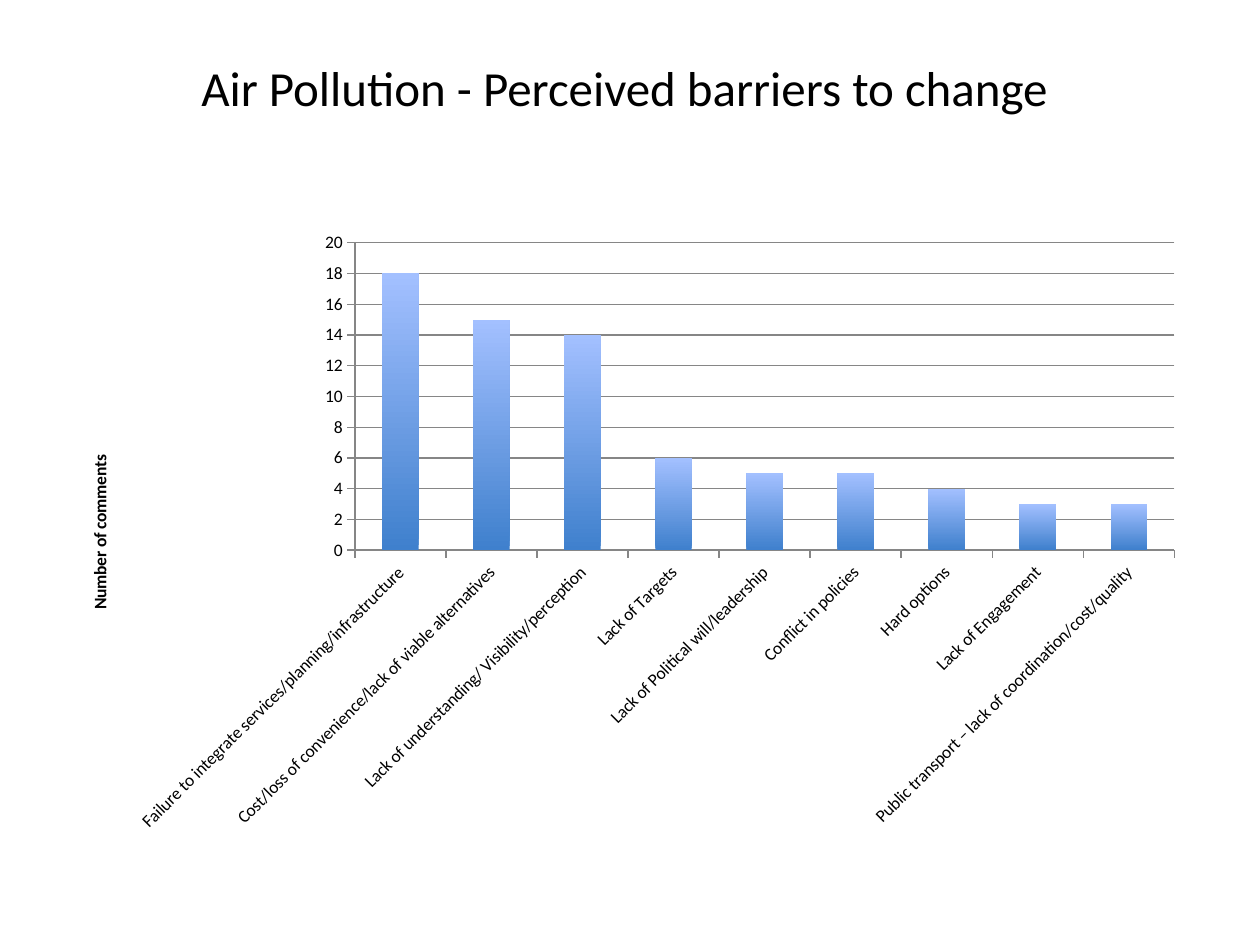
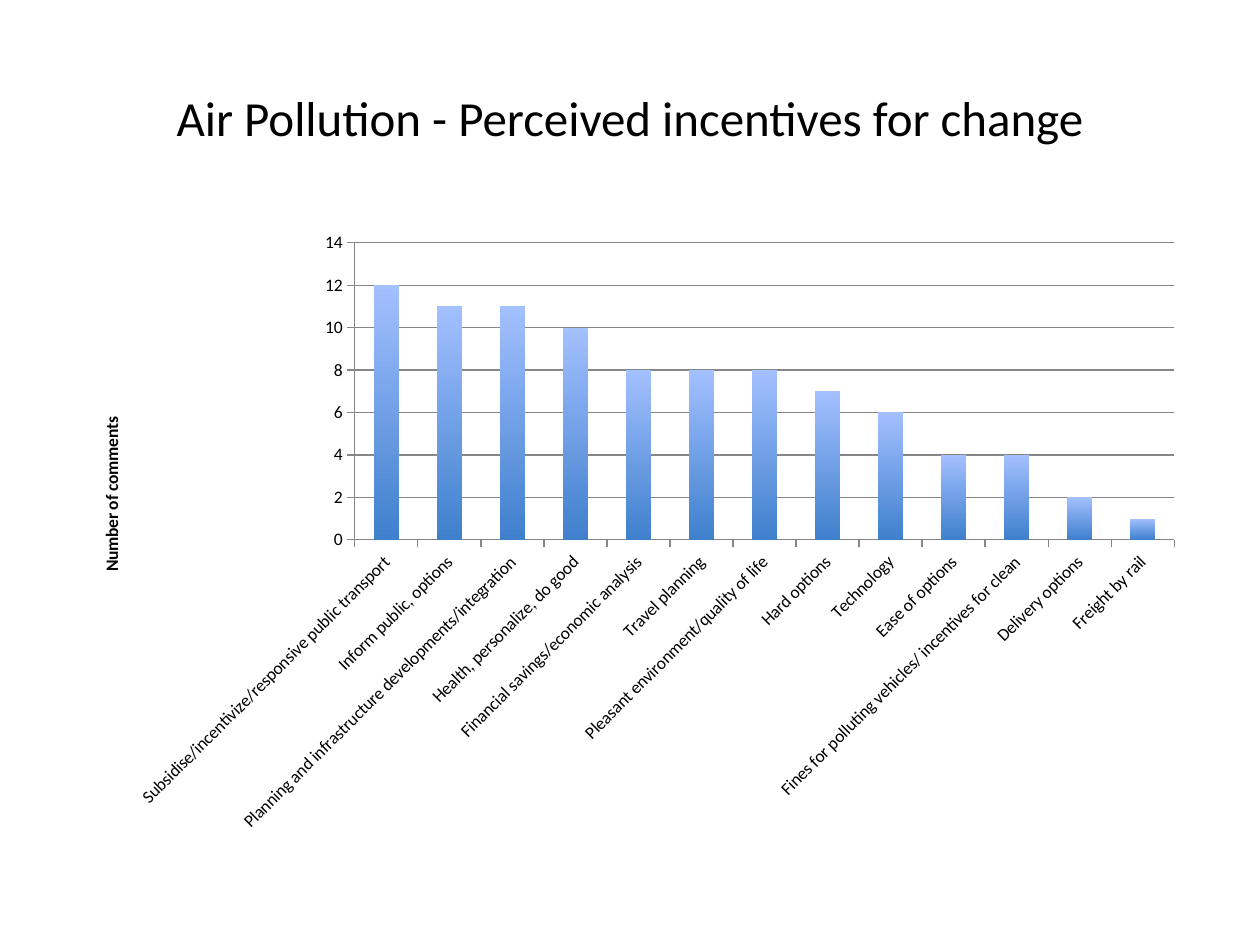
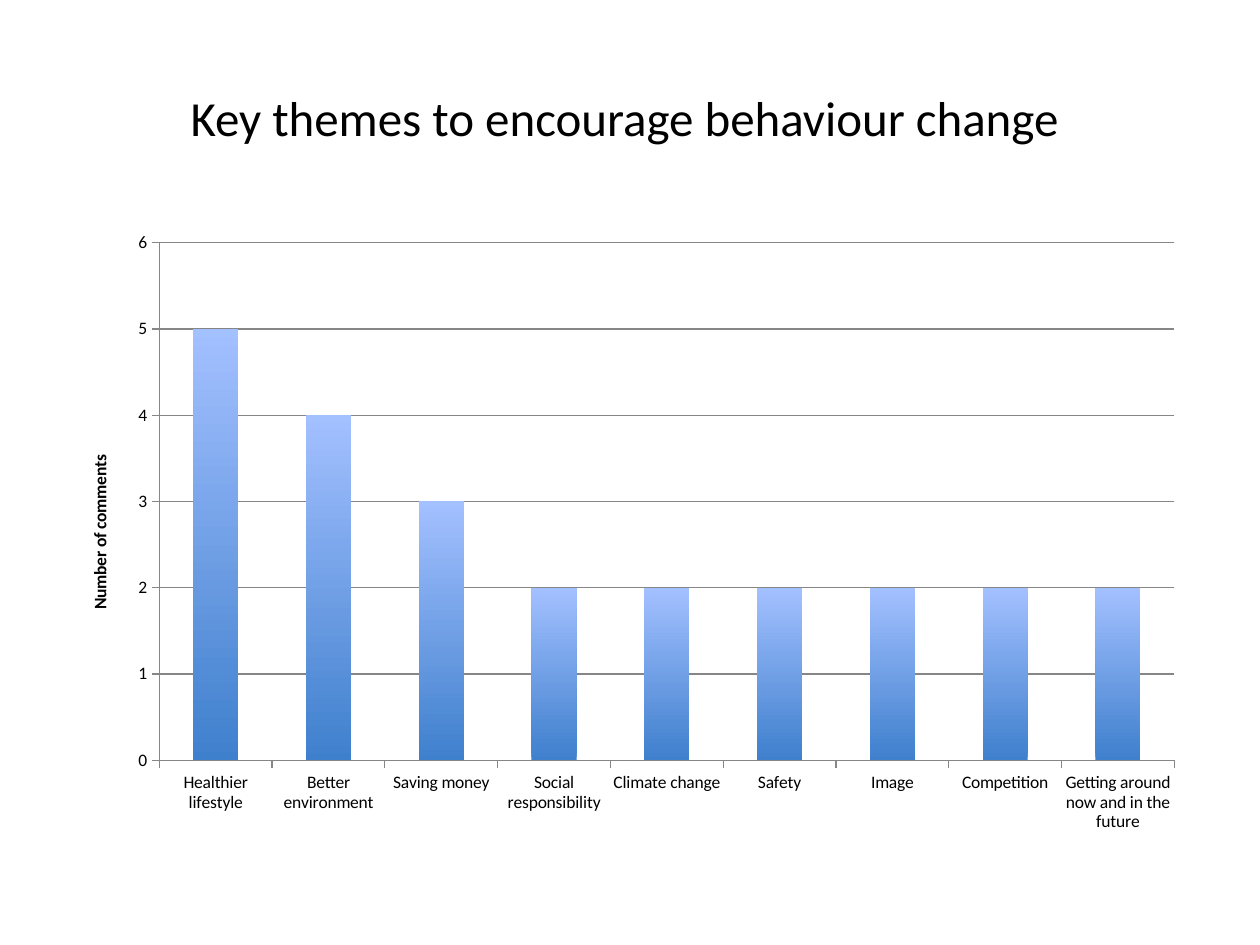
from pptx import Presentation
from pptx.chart.data import CategoryChartData
from pptx.dml.color import RGBColor
from pptx.enum.chart import XL_CHART_TYPE as ChartType, XL_TICK_MARK as Tick
from pptx.enum.text import MSO_ANCHOR as Anchor, PP_ALIGN as Align
from pptx.oxml import parse_xml
from pptx.oxml.ns import nsdecls, qn
from pptx.util import Inches, Pt

COLORS = {"text": "000000", "axis": "868686", "bar_foot": "3F80CD", "bar_top": "A3C0FF"}
FONT = "Calibri"
TITLE_SIZE, CHART_SIZE = 28, 10
LINE_HEIGHT = 1.22
WIDTH, HEIGHT = Inches(10), Inches(7.5)
TITLE_BOX = (0.05, 0.04, 0.9, 1 / 6)
CHART_BOX = (0.05, 7 / 30, 0.9, 0.66)

BARRIERS = [
    ("Failure to integrate services/planning/infrastructure", 18),
    ("Cost/loss of convenience/lack of viable alternatives", 15),
    ("Lack of understanding/ Visibility/perception", 14),
    ("Lack of Targets", 6),
    ("Lack of Political will/leadership", 5),
    ("Conflict in policies", 5),
    ("Hard options", 4),
    ("Lack of Engagement", 3),
    ("Public transport – lack of coordination/cost/quality", 3),
]
INCENTIVES = [
    ("Subsidise/incentivize/responsive public transport", 12),
    ("Inform public, options", 11),
    ("Planning and infrastructure developments/integration", 11),
    ("Health, personalize, do good", 10),
    ("Financial savings/economic analysis", 8),
    ("Travel planning", 8),
    ("Pleasant environment/quality of life", 8),
    ("Hard options", 7),
    ("Technology", 6),
    ("Ease of options", 4),
    ("Fines for polluting vehicles/ incentives for clean", 4),
    ("Delivery options", 2),
    ("Freight by rail", 1),
]
THEMES = [
    ("Healthier lifestyle", 5),
    ("Better environment", 4),
    ("Saving money", 3),
    ("Social responsibility", 2),
    ("Climate change", 2),
    ("Safety", 2),
    ("Image", 2),
    ("Competition", 2),
    ("Getting around now and in the future", 2),
]


def rgb(name):
    return RGBColor.from_string(COLORS[name])


def place(box):
    x, y, w, h = box
    return round(x * WIDTH), round(y * HEIGHT), round(w * WIDTH), round(h * HEIGHT)


def style_font(font, size, bold=False, color="text"):
    font.name, font.size, font.bold = FONT, Pt(size), bold
    font.color.rgb = rgb(color)


def write_text(tf, text, size, bold=False, align=Align.CENTER):
    p = tf.paragraphs[0]
    p.alignment = align
    r = p.add_run()
    r.text = text
    style_font(r.font, size, bold)


def add_title(s, text, raised_lines=0):
    sp = s.shapes.title
    sp.left, sp.top, sp.width, sp.height = place(TITLE_BOX)
    tf = sp.text_frame
    tf.word_wrap = True
    tf.vertical_anchor = Anchor.MIDDLE
    tf.margin_bottom = Inches(0.05) + raised_lines * Pt(TITLE_SIZE * LINE_HEIGHT)
    write_text(tf, text, TITLE_SIZE)


def style_line(line):
    line.color.rgb = rgb("axis")
    line.width = Pt(0.75)


def add_axis_title(axis, text, position=None):
    title = axis.axis_title
    write_text(title.text_frame, text, CHART_SIZE, bold=True)
    body = next(title._element.iter(qn("a:bodyPr")))
    body.set("rot", "-5400000")
    body.set("vert", "horz")
    if position:
        for old in title._element.findall(qn("c:layout")):
            title._element.remove(old)
        x, y = position
        title._element.find(qn("c:tx")).addnext(parse_xml(
            f'<c:layout {nsdecls("c")}><c:manualLayout>'
            '<c:xMode val="edge"/><c:yMode val="edge"/>'
            f'<c:x val="{x}"/><c:y val="{y}"/></c:manualLayout></c:layout>'))


def add_comment_chart(s, rows, title_position=None):
    data = CategoryChartData()
    data.categories = [label for label, _ in rows]
    data.add_series("Series 1", [count for _, count in rows])
    chart = s.shapes.add_chart(ChartType.COLUMN_CLUSTERED, *place(CHART_BOX), data).chart
    chart.has_title = chart.has_legend = False
    style_font(chart.font, CHART_SIZE)

    for axis in (chart.category_axis, chart.value_axis):
        axis.major_tick_mark, axis.minor_tick_mark = Tick.OUTSIDE, Tick.NONE
        style_line(axis.format.line)
    chart.value_axis.has_major_gridlines = True
    style_line(chart.value_axis.major_gridlines.format.line)
    add_axis_title(chart.value_axis, "Number of comments", title_position)

    plot = chart.plots[0]
    plot.gap_width, plot.vary_by_categories = 150, False
    fill = plot.series[0].format.fill
    fill.gradient()
    fill.gradient_angle = 90
    for stop, name in zip(fill.gradient_stops, ("bar_foot", "bar_top")):
        stop.color.rgb = rgb(name)


def main():
    prs = Presentation()
    prs.slide_width, prs.slide_height = WIDTH, HEIGHT
    slides = [
        ("Air Pollution - Perceived barriers to change ", 1, BARRIERS, None),
        ("Air Pollution - Perceived incentives for change", 0, INCENTIVES, (0.03, 0.31)),
        ("Key themes to encourage behaviour change ", 0, THEMES, None),
    ]
    for title, raised_lines, rows, title_position in slides:
        s = prs.slides.add_slide(prs.slide_layouts[5])
        add_title(s, title, raised_lines)
        add_comment_chart(s, rows, title_position)
    prs.save("out.pptx")


if __name__ == "__main__":
    main()
